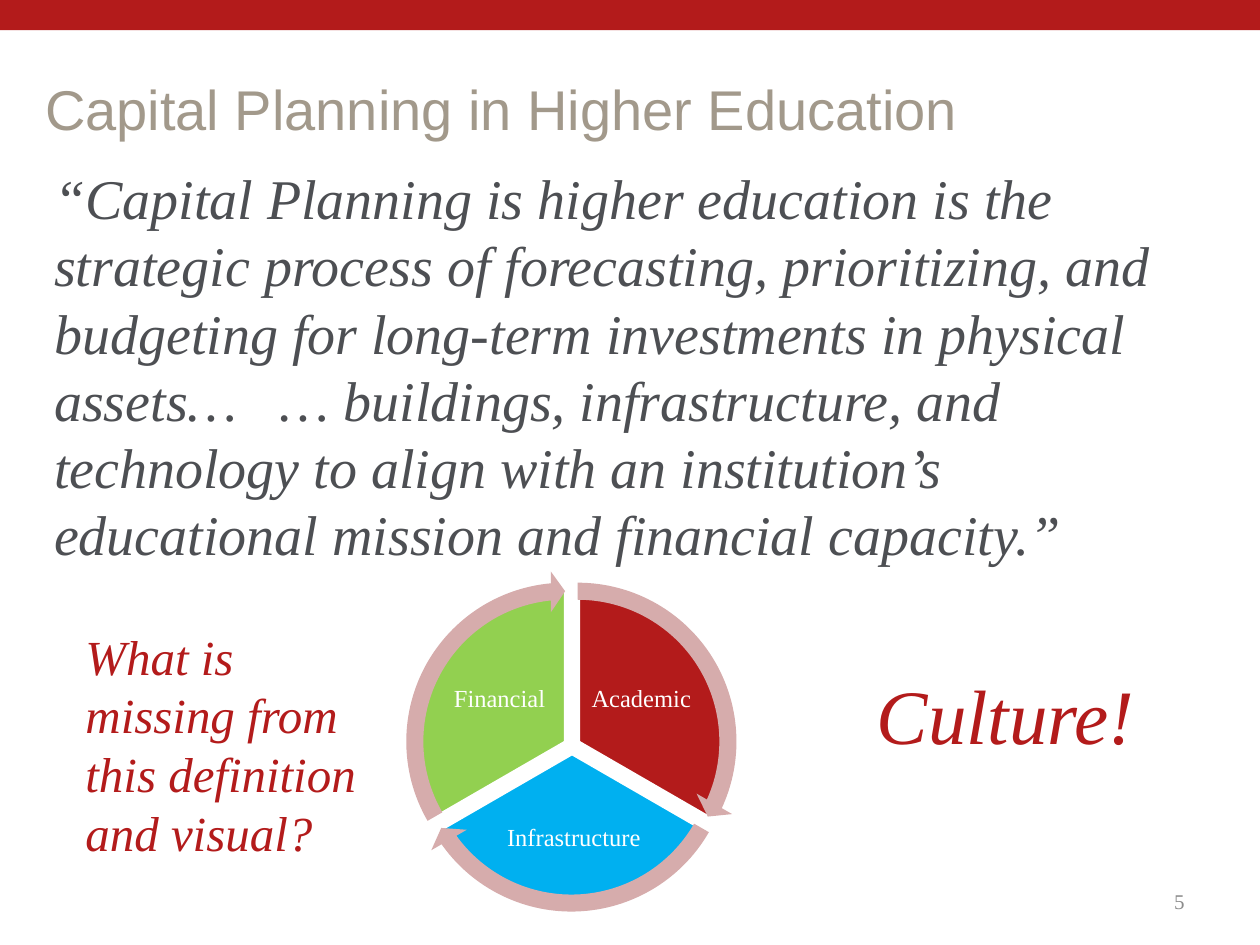
from typing import NamedTuple

from pptx import Presentation
from pptx import util as u
from pptx.dml.color import RGBColor
from pptx.enum import shapes, text

SERIF, SANS = "Times New Roman", "Arial"
RED, GREEN, BLUE, PINK = "B31B1B", "92D050", "00B0F0", "D6ACAC"
WHITE, GRAY, TAUPE, SLATE = "FFFFFF", "8C8C8C", "A2998B", "4D4F53"
PIE_SIZE, ARROW_SIZE = 2.42, 2.71
MIDDLE = text.MSO_ANCHOR.MIDDLE


class Box(NamedTuple):
    left: float
    top: float
    width: float
    height: float


class Words(NamedTuple):
    content: str
    box: Box
    size: int
    color: str
    font: str = SERIF
    italic: bool = False
    anchor: text.MSO_ANCHOR = text.MSO_ANCHOR.TOP
    align: text.PP_ALIGN = text.PP_ALIGN.LEFT
    insets: tuple = (0.1, 0.05, 0.1, 0.05)
    spacing: float = 1.0
    grows: bool = False


class Sector(NamedTuple):
    label: str
    label_box: Box
    color: str
    left: float
    top: float
    start: float
    end: float


class Arc(NamedTuple):
    left: float
    top: float
    head: float
    tail: float


def rgb(value: str) -> RGBColor:
    return RGBColor.from_string(value)


def add_solid(slide, kind, box: Box, fill: str, adjustments=(), outline=None):
    """Draw a flat preset shape; angles are in units of 100000/60000 degree."""
    solid = slide.shapes.add_shape(kind, *map(u.Inches, box))
    solid.shadow.inherit = False
    solid.fill.solid()
    solid.fill.fore_color.rgb = rgb(fill)
    for index, value in enumerate(adjustments):
        solid.adjustments[index] = value
    if outline:
        solid.line.color.rgb = rgb(outline)
        solid.line.width = u.Pt(2)
    else:
        solid.line.fill.background()


def add_words(slide, words: Words) -> None:
    frame = slide.shapes.add_textbox(*map(u.Inches, words.box)).text_frame
    frame.word_wrap = True
    frame.vertical_anchor = words.anchor
    if words.grows:
        frame.auto_size = text.MSO_AUTO_SIZE.SHAPE_TO_FIT_TEXT
    (frame.margin_left, frame.margin_top,
     frame.margin_right, frame.margin_bottom) = map(u.Inches, words.insets)
    paragraph = frame.paragraphs[0]
    paragraph.alignment = words.align
    paragraph.line_spacing = words.spacing
    run = paragraph.add_run()
    run.text = words.content
    run.font.name = words.font
    run.font.size = u.Pt(words.size)
    run.font.italic = words.italic
    run.font.color.rgb = rgb(words.color)


def add_sector(slide, sector: Sector) -> None:
    add_solid(slide, shapes.MSO_SHAPE.PIE,
              Box(sector.left, sector.top, PIE_SIZE, PIE_SIZE),
              sector.color, (sector.start, sector.end), WHITE)
    add_words(slide, Words(sector.label, sector.label_box, 14, WHITE,
                           anchor=MIDDLE, align=text.PP_ALIGN.CENTER,
                           insets=(0.02,) * 4, spacing=0.9))


def add_arc(slide, arc: Arc) -> None:
    add_solid(slide, shapes.MSO_SHAPE.CIRCULAR_ARROW,
              Box(arc.left, arc.top, ARROW_SIZE, ARROW_SIZE),
              PINK, (0.05, 3.28, arc.head, arc.tail, 0.06))


PASSAGES = [
    Words("5", Box(7.17, 6.95, 2.33, 0.4), 12, GRAY,
          anchor=MIDDLE, align=text.PP_ALIGN.RIGHT),
    Words("“Capital Planning is higher education is the strategic process of "
          "forecasting, prioritizing, and budgeting for long-term investments "
          "in physical assets…   … buildings, infrastructure, and technology "
          "to align with an institution’s educational mission and financial "
          "capacity.”", Box(0.27, 1.25, 9.49, 4.37), 32, SLATE, italic=True,
          insets=(0.16, 0.05, 0.1, 0.05)),
    Words("Capital Planning in Higher Education", Box(0.26, 0.48, 9.49, 0.75),
          32, TAUPE, font=SANS, anchor=MIDDLE),
]
SECTORS = [
    Sector("Academic ", Box(4.66, 5.19, 0.86, 0.72), RED, 3.38, 4.68, 162, 18),
    Sector("Infrastructure", Box(3.91, 6.34, 1.29, 0.63), BLUE,
           3.33, 4.77, 18, 90),
    Sector("Financial ", Box(3.56, 5.19, 0.86, 0.72), GREEN,
           3.28, 4.68, 90, 162),
]
ARCS = [
    Arc(3.23, 4.53, 14.72, 161.99),
    Arc(3.18, 4.62, 86.72, 18),
    Arc(3.13, 4.53, 158.73, 90),
]
CALLOUTS = [
    Words("What is missing from this definition and visual?",
          Box(0.58, 4.92, 2.5, 1.99), 28, RED, italic=True, grows=True),
    Words("Culture!", Box(6.86, 5.25, 2.55, 0.84), 44, RED,
          italic=True, grows=True),
]


def main() -> None:
    deck = Presentation()
    deck.slide_width, deck.slide_height = u.Inches(10), u.Inches(7.5)
    slide = deck.slides.add_slide(deck.slide_layouts[6])

    # Top band, page number, quotation and title
    add_solid(slide, shapes.MSO_SHAPE.RECTANGLE, Box(0, 0, 10, 0.24), RED)
    for passage in PASSAGES:
        add_words(slide, passage)

    # Planning cycle: sectors, then the arrows around them
    for sector in SECTORS:
        add_sector(slide, sector)
    for arc in ARCS:
        add_arc(slide, arc)

    # Question and answer
    for callout in CALLOUTS:
        add_words(slide, callout)

    deck.save("out.pptx")


if __name__ == "__main__":
    main()
